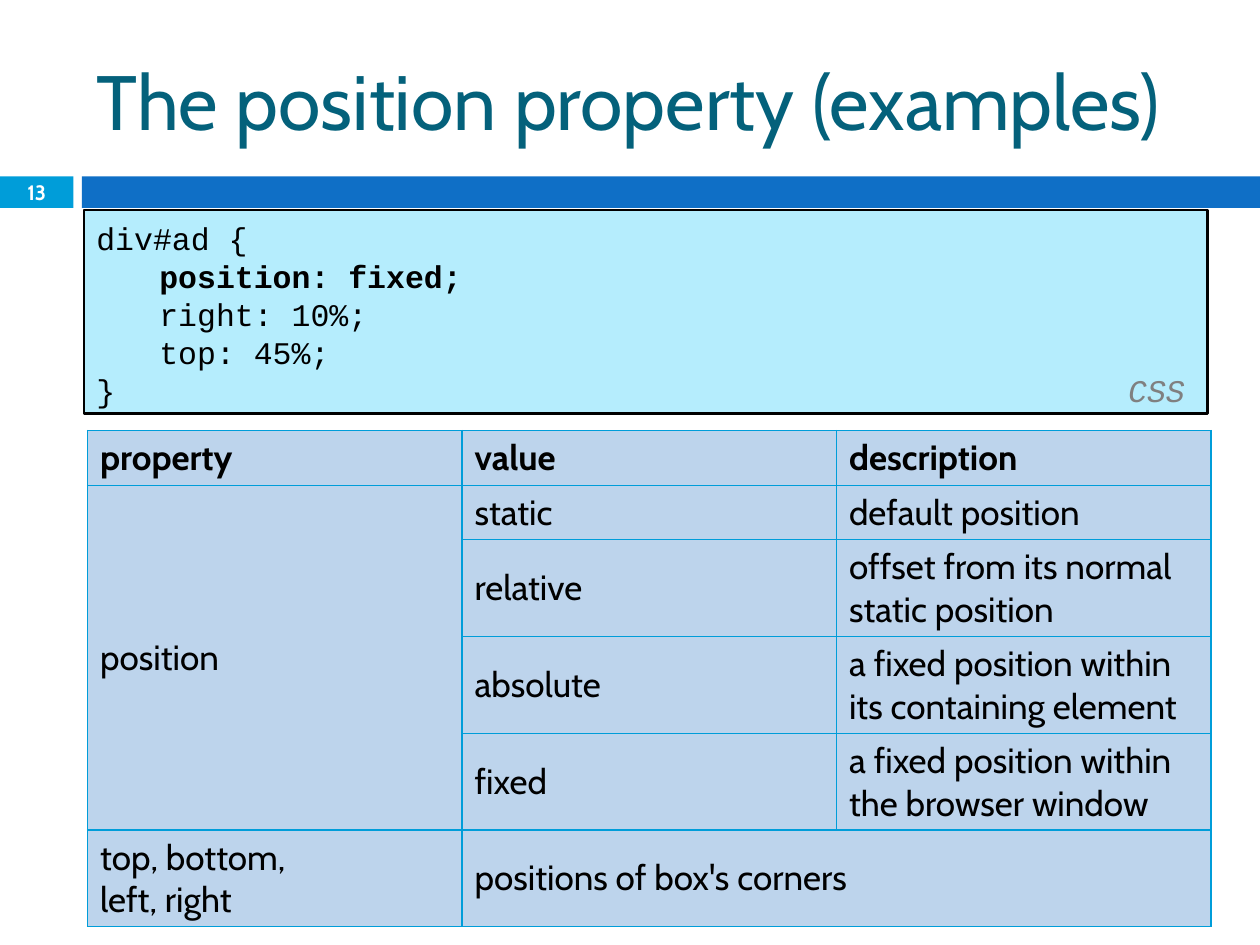
import pptx
import pptx.dml.color
import pptx.enum.shapes
import pptx.enum.text
import pptx.oxml
import pptx.oxml.ns
import pptx.util
from lxml import etree

Pt = pptx.util.Pt
ALIGN = pptx.enum.text.PP_ALIGN
MIDDLE = pptx.enum.text.MSO_ANCHOR.MIDDLE
COLORS = {
    "title": "04617B", "accent": "009DD9", "bar": "0F6FC6",
    "code": "B5EDFD", "cell": "BDD4EC", "label": "808080",
    "text": "000000", "light": "FFFFFF",
}


def rgb(name):
    return pptx.dml.color.RGBColor.from_string(COLORS[name])


def add_xml(parent, tag, **attributes):
    return etree.SubElement(parent, pptx.oxml.ns.qn(tag), attributes)


class SlideBuilder:
    body_font = "Cabin"
    code_font = "Courier New"

    def __init__(self, page):
        self.page = page

    def style(self, font, name, size, color, bold=False):
        font.name, font.size, font.bold = name, Pt(size), bold
        font.color.rgb = rgb(color)

    def title(self, text, left, top, width, height):
        box = self.page.shapes.title
        box.left, box.top, box.width, box.height = map(Pt, (left, top, width, height))
        box.text_frame.text = text
        box.text_frame.vertical_anchor = MIDDLE
        para = box.text_frame.paragraphs[0]
        para.alignment = ALIGN.LEFT
        self.style(para.font, self.body_font, 44, "title")

    def rectangle(self, left, top, width, height, fill, line=None):
        box = self.page.shapes.add_shape(
            pptx.enum.shapes.MSO_SHAPE.RECTANGLE, *map(Pt, (left, top, width, height)))
        box.shadow.inherit = False
        box.fill.solid()
        box.fill.fore_color.rgb = rgb(fill)
        if line:
            box.line.color.rgb = rgb(line)
            box.line.width = Pt(1.5)
        else:
            box.line.fill.background()
        return box

    def page_number(self, text, left, top, width, height):
        box = self.page.shapes.add_textbox(*map(Pt, (left, top, width, height)))
        frame = box.text_frame
        frame.word_wrap = True
        frame.vertical_anchor = MIDDLE
        frame.margin_top = frame.margin_bottom = 0
        frame.text = text
        frame.paragraphs[0].alignment = ALIGN.CENTER
        self.style(frame.paragraphs[0].font, self.body_font, 11.9, "light", True)

    def code(self, lines, label, bold_line, left, top, width, height):
        frame = self.rectangle(left, top, width, height, "code", "text").text_frame
        frame.word_wrap = True
        frame.vertical_anchor = pptx.enum.text.MSO_ANCHOR.TOP
        frame.margin_top = Pt(5)
        for index, line in enumerate(lines):
            para = frame.paragraphs[0] if index == 0 else frame.add_paragraph()
            para.alignment = ALIGN.LEFT
            para.line_spacing = Pt(21.7)
            para.add_run().text = line
            self.style(para.font, self.code_font, 18, "text", index == bold_line)
        # Language label on the last line, at a right tab stop
        para.runs[0].text += "\t"
        span = para.add_run()
        span.text = label
        span.font.italic = True
        span.font.color.rgb = rgb("label")
        properties = para._p.get_or_add_pPr()
        stops = pptx.oxml.parse_xml(
            f'<a:tabLst {pptx.oxml.ns.nsdecls("a")}>'
            f'<a:tab pos="{Pt(622)}" algn="r"/></a:tabLst>')
        properties.find(pptx.oxml.ns.qn("a:lnSpc")).addnext(stops)

    def cell_borders(self, cell):
        properties = cell._tc.get_or_add_tcPr()
        for side in "LRTB":
            line = add_xml(properties, f"a:ln{side}", w=str(Pt(0.79)))
            add_xml(add_xml(line, "a:solidFill"), "a:srgbClr", val=COLORS["accent"])

    def table(self, rows, heights, merges, left, top, width):
        table = self.page.shapes.add_table(
            len(rows), len(rows[0]),
            *map(Pt, (left, top, width, sum(heights)))).table
        table.first_row = table.horz_banding = False
        for column in table.columns:
            column.width = Pt(width / len(rows[0]))
        for r, (texts, height) in enumerate(zip(rows, heights)):
            table.rows[r].height = Pt(height)
            for c, text in enumerate(texts):
                cell = table.cell(r, c)
                self.cell_borders(cell)
                cell.fill.solid()
                cell.fill.fore_color.rgb = rgb("cell")
                cell.vertical_anchor = MIDDLE
                cell.text = text
                self.style(cell.text_frame.paragraphs[0].font,
                           self.body_font, 20, "text", r == 0)
        for first, last in merges:
            table.cell(*first).merge(table.cell(*last))


def main():
    deck = pptx.Presentation()
    deck.slide_width, deck.slide_height = Pt(720), Pt(540)
    builder = SlideBuilder(deck.slides.add_slide(deck.slide_layouts[5]))

    # Header band, title and page number
    builder.rectangle(0, 100.8, 42, 18, "accent")
    builder.rectangle(46.8, 100.8, 673.2, 18, "bar")
    builder.title("The position property (examples)", 48, 18, 642, 78)
    builder.page_number("13", 0, 100, 42, 19.5)

    # Code sample
    builder.code(
        ["div#ad {", "\tposition: fixed;", "\tright: 10%;", "\ttop: 45%;", "}"],
        "CSS", 1, 48, 120, 642, 116.5)

    # Property table
    builder.table(
        [["property", "value", "description"],
         ["position", "static", "default position"],
         ["", "relative", "offset from its normal static position"],
         ["", "absolute", "a fixed position within its containing element"],
         ["", "fixed", "a fixed position within the browser window"],
         ["top, bottom, \vleft, right", "positions of box's corners", ""]],
        [31.2] * 2 + [55.3] * 4,
        [((1, 0), (4, 0)), ((5, 1), (5, 2))],
        50, 246, 642)

    deck.save("out.pptx")


if __name__ == "__main__":
    main()
